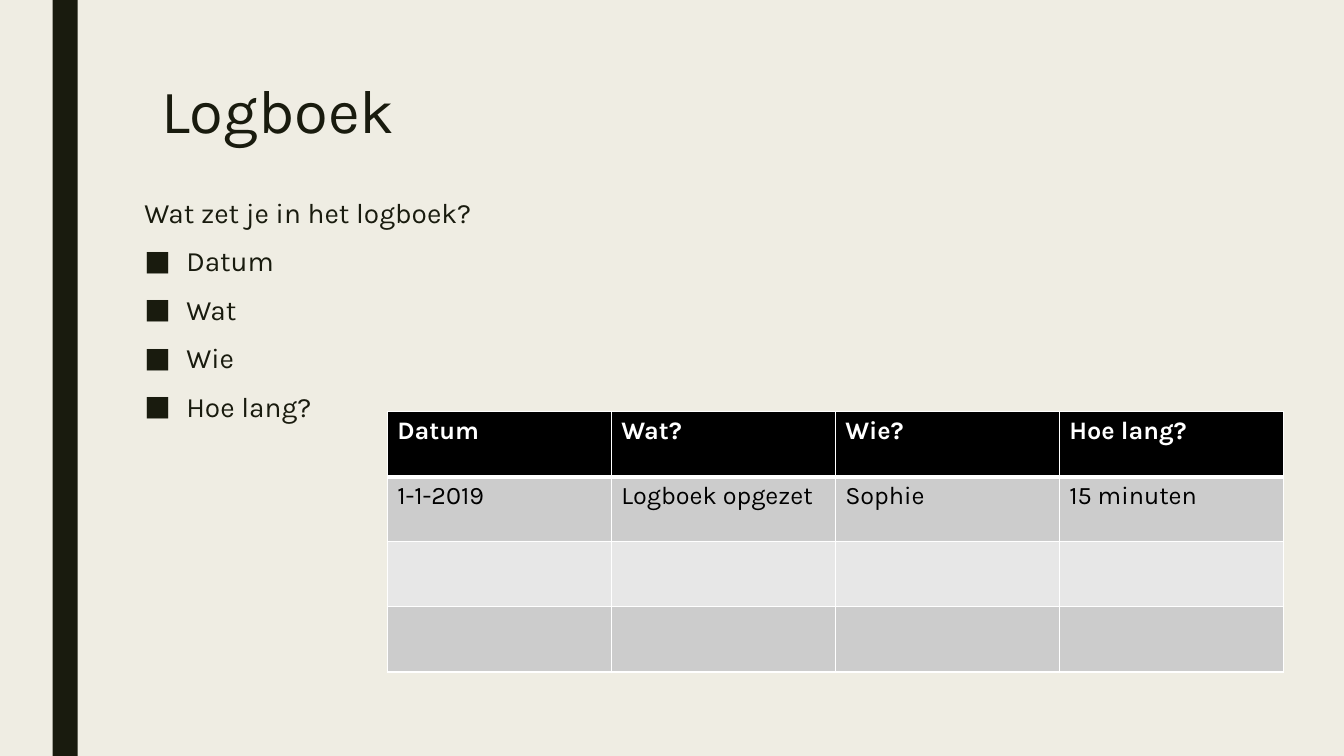
from lxml.etree import SubElement
from pptx import Presentation
from pptx.dml.color import RGBColor
from pptx.enum.shapes import MSO_SHAPE as Shape
from pptx.enum.text import MSO_ANCHOR as Anchor, PP_ALIGN as Align
from pptx.oxml.ns import qn
from pptx.util import Inches, Pt

FONT = "Karla"
COLORS = {"paper": "EFEDE3", "ink": "191B0E", "black": "000000",
          "white": "FFFFFF", "band": "CCCCCC", "light": "E7E7E7"}
UNIT = Inches(1 / 12)  # the page is a grid of 160 columns by 90 rows
BULLETS = ["Datum", "Wat", "Wie", "Hoe lang?"]
LOG = [["Datum", "Wat?", "Wie?", "Hoe lang?"],
       ["1-1-2019", "Logboek opgezet", "Sophie", "15 minuten"],
       [""] * 4,
       [""] * 4]


def color(name):
    return RGBColor.from_string(COLORS[name])


def grid(*box):
    return [round(cells * UNIT) for cells in box]


def add_span(para, text, size, tint, bold=False):
    span = para.add_run()
    span.text = text
    span.font.name, span.font.size, span.font.bold = FONT, Pt(size), bold
    span.font.color.rgb = color(tint)


def add_frame(page, box):
    frame = page.shapes.add_textbox(*grid(*box)).text_frame
    frame.word_wrap = True
    frame.vertical_anchor = Anchor.TOP
    return frame


# Vertical bar at the left edge
def add_bar(page, box):
    bar = page.shapes.add_shape(Shape.RECTANGLE, *grid(*box))
    bar.shadow.inherit = False
    bar.fill.solid()
    bar.fill.fore_color.rgb = color("ink")
    bar.line.fill.background()


# Slide title
def add_title(page, box, text):
    para = add_frame(page, box).paragraphs[0]
    para.alignment = Align.LEFT
    para.line_spacing = 0.89
    add_span(para, text, 44, "ink")


# Question with its bulleted answers
def add_question(page, box, question, answers):
    frame = add_frame(page, box)
    for index, text in enumerate([question, *answers]):
        para = frame.add_paragraph() if index else frame.paragraphs[0]
        para.alignment = Align.LEFT
        if index:
            props = para._p.get_or_add_pPr()
            indent = round(5 * UNIT)
            props.set("marL", str(indent))
            props.set("indent", str(-indent))
            SubElement(props, qn("a:buFont"), typeface=FONT)
            SubElement(props, qn("a:buChar"), char="■")
            para.space_before = Pt(10)
        para.line_spacing = 0.94
        para.space_after = Pt(2)
        add_span(para, text, 20, "ink")


def set_borders(cell, widths):
    props = cell._tc.get_or_add_tcPr()
    for position, (side, width) in enumerate(widths.items()):
        line = SubElement(props, qn(f"a:ln{side}"), w=str(Pt(width)))
        fill = SubElement(line, qn("a:solidFill"))
        SubElement(fill, qn("a:srgbClr"), val=COLORS["white"])
        props.insert(position, line)


# Logbook table: dark header above banded rows
def add_log(page, box, rows):
    left, top, width, height = grid(*box)
    table = page.shapes.add_table(len(rows), len(rows[0]),
                                  left, top, width, height).table
    for r, row in enumerate(rows):
        header = r == 0
        band = "black" if header else "band" if r % 2 else "light"
        widths = {"L": 1, "R": 1, "T": 3 if r == 1 else 1, "B": 3 if header else 1}
        for c, text in enumerate(row):
            cell = table.cell(r, c)
            cell.fill.solid()
            cell.fill.fore_color.rgb = color(band)
            set_borders(cell, widths)
            para = cell.text_frame.paragraphs[0]
            if text:
                add_span(para, text, 18, "white" if header else "black", header)
            else:
                para.font.size = Pt(18)


def add_logbook_page(deck):
    page = deck.slides.add_slide(deck.slide_layouts[6])
    page.background.fill.solid()
    page.background.fill.fore_color.rgb = color("paper")
    add_bar(page, (6.25, 0, 3, 90))
    add_title(page, (18, 9, 126, 19.5), "Logboek")
    add_question(page, (16, 23, 126, 47), "Wat zet je in het logboek?", BULLETS)
    add_log(page, (46.1, 49, 106.67, 31), LOG)


def main():
    deck = Presentation()
    deck.slide_width, deck.slide_height = grid(160, 90)
    add_logbook_page(deck)
    deck.save("out.pptx")


if __name__ == "__main__":
    main()
